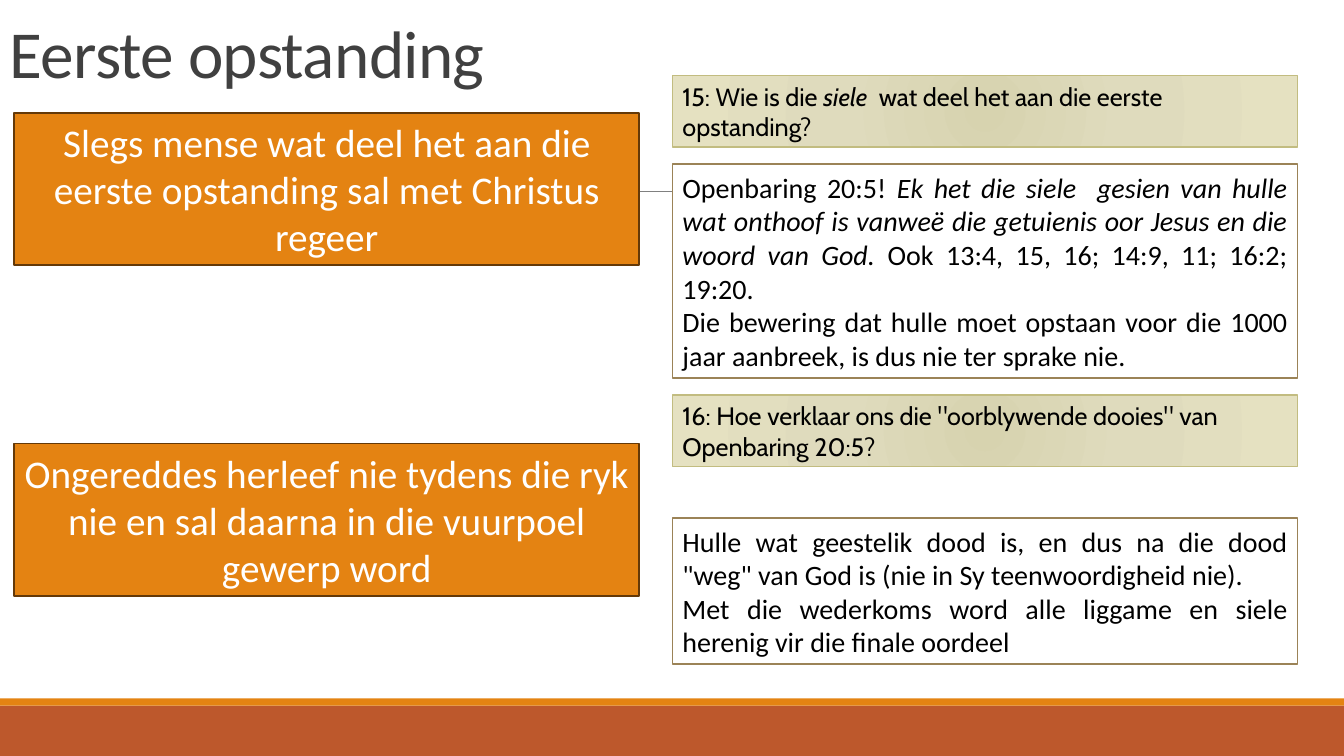
import pptx
import pptx.dml.color
import pptx.enum.shapes
import pptx.enum.text
import pptx.oxml
import pptx.oxml.ns
import pptx.util
from pptx.util import Inches

ALIGN = pptx.enum.text.PP_ALIGN
ANCHOR = pptx.enum.text.MSO_ANCHOR

# Each text is a list of paragraphs; a paragraph is a list of (words, italic) runs.
TITLE = [[("Eerste opstanding", False)]]
# (top, height, text)
STATEMENTS = [
    (1.12, 1.51, [[("Slegs mense wat deel het aan die eerste opstanding sal met Christus regeer", False)]]),
    (4.4, 1.51, [[("Ongereddes herleef nie tydens die ryk nie en sal daarna in die vuurpoel gewerp word", False)]]),
]
QUESTIONS = [
    (0.75, 0.71, [[("15: Wie is die ", False), ("siele", True),
                   ("  wat deel het aan die eerste opstanding?", False)]]),
    (3.92, 0.71, [[('16: Hoe verklaar ons die "oorblywende dooies" van Openbaring 20:5?', False)]]),
]
ANSWERS = [
    (1.63, 2.12, [
        [("Openbaring 20:5! ", False),
         ("Ek het die siele  gesien van hulle wat onthoof is vanweë die getuienis "
          "oor Jesus en die woord van God. ", True),
         ("Ook 13:4, 15, 16; 14:9, 11; 16:2; 19:20.", False)],
        [("Die bewering dat hulle moet opstaan voor die 1000 jaar aanbreek, "
          "is dus nie ter sprake nie.", False)],
    ]),
    (5.14, 1.45, [
        [('Hulle wat geestelik dood is, en dus na die dood "weg" van God is '
          "(nie in Sy teenwoordigheid nie).", False)],
        [("Met die wederkoms word alle liggame en siele herenig vir die finale oordeel", False)],
    ]),
]

THEME = {
    "footer": "BD582C",
    "accent": "E48312",
    "rule": "808080",
    "title": dict(font="Calibri", size=48, ink="404040", align=ALIGN.LEFT),
    "statement": dict(font="Calibri", size=28, ink="FFFFFF", align=ALIGN.CENTER,
                      fill="E48312", line="643908", weight=1.25),
    "question": dict(font="Cabin", size=18, ink="000000", align=ALIGN.LEFT,
                     fill=[(0, "D7D3AF"), (45, "DFDBBD"), (100, "E5E1C1")],
                     line="C2BC80", weight=1),
    "answer": dict(font="Calibri", size=20, ink="000000", align=ALIGN.JUSTIFY,
                   fill="FFFFFF", line="9B8357", weight=1.25),
}
SLIDE_WIDTH, SLIDE_HEIGHT = 13.33, 7.5
COLUMN_WIDTH = 6.2
LEFT_COLUMN, RIGHT_COLUMN = 0.14, 6.67
FOOTER_TOP, STRIPE_HEIGHT = 7, 0.07
RULE_START, RULE_END, RULE_Y = 1.31, 12.21, 1.9


def rgb(code):
    return pptx.dml.color.RGBColor.from_string(code)


def write(frame, text, style, anchor):
    frame.word_wrap = True
    frame.vertical_anchor = anchor
    for number, runs in enumerate(text):
        paragraph = frame.add_paragraph() if number else frame.paragraphs[0]
        paragraph.alignment = style["align"]
        paragraph.font.name = style["font"]
        paragraph.font.size = pptx.util.Pt(style["size"])
        paragraph.font.color.rgb = rgb(style["ink"])
        for words, italic in runs:
            run = paragraph.add_run()
            run.text = words
            if italic:
                run.font.italic = True


def fill_radial(shape, stops):
    """Replace the default gradient by a circular one."""
    shape.fill.gradient()
    properties = shape._element.spPr
    stop_xml = "".join(
        f'<a:gs pos="{position * 1000}"><a:srgbClr val="{code}"/></a:gs>'
        for position, code in stops)
    radial = pptx.oxml.parse_xml(
        f'<a:gradFill {pptx.oxml.ns.nsdecls("a")} rotWithShape="1"><a:gsLst>{stop_xml}</a:gsLst>'
        '<a:path path="circle"><a:fillToRect l="100000" t="100000" r="100000" b="100000"/>'
        '</a:path></a:gradFill>')
    properties.replace(properties.find(pptx.oxml.ns.qn("a:gradFill")), radial)


def add_box(slide, left, top, width, height, fill):
    box = slide.shapes.add_shape(
        pptx.enum.shapes.MSO_SHAPE.RECTANGLE,
        Inches(left), Inches(top), Inches(width), Inches(height))
    box.shadow.inherit = False
    if isinstance(fill, list):
        fill_radial(box, fill)
    else:
        box.fill.solid()
        box.fill.fore_color.rgb = rgb(fill)
    box.line.fill.background()
    return box


def add_cards(slide, cards, left, style):
    for top, height, text in cards:
        card = add_box(slide, left, top, COLUMN_WIDTH, height, style["fill"])
        card.line.color.rgb = rgb(style["line"])
        card.line.width = pptx.util.Pt(style["weight"])
        write(card.text_frame, text, style, ANCHOR.MIDDLE)


def add_rule(slide):
    rule = slide.shapes.add_connector(
        pptx.enum.shapes.MSO_CONNECTOR.STRAIGHT,
        Inches(RULE_START), Inches(RULE_Y), Inches(RULE_END), Inches(RULE_Y))
    rule.line.color.rgb = rgb(THEME["rule"])
    rule.line.width = pptx.util.Pt(0.5)
    rule._element.spPr.append(
        pptx.oxml.parse_xml(f'<a:effectLst {pptx.oxml.ns.nsdecls("a")}/>'))


def add_title(slide):
    title = slide.shapes.add_textbox(0, 0, Inches(COLUMN_WIDTH), Inches(0.96))
    write(title.text_frame, TITLE, THEME["title"], ANCHOR.BOTTOM)
    heading = title.text_frame.paragraphs[0]
    heading.line_spacing = 0.85
    heading.runs[0].font._element.set("spc", "-50")


def main():
    deck = pptx.Presentation()
    deck.slide_width, deck.slide_height = Inches(SLIDE_WIDTH), Inches(SLIDE_HEIGHT)
    slide = deck.slides.add_slide(deck.slide_layouts[6])
    add_box(slide, 0, FOOTER_TOP, SLIDE_WIDTH, SLIDE_HEIGHT - FOOTER_TOP, THEME["footer"])
    add_box(slide, 0, FOOTER_TOP - STRIPE_HEIGHT, SLIDE_WIDTH, STRIPE_HEIGHT, THEME["accent"])
    add_rule(slide)
    add_title(slide)
    add_cards(slide, STATEMENTS, LEFT_COLUMN, THEME["statement"])
    add_cards(slide, QUESTIONS, RIGHT_COLUMN, THEME["question"])
    add_cards(slide, ANSWERS, RIGHT_COLUMN, THEME["answer"])
    deck.save("out.pptx")


if __name__ == "__main__":
    main()
